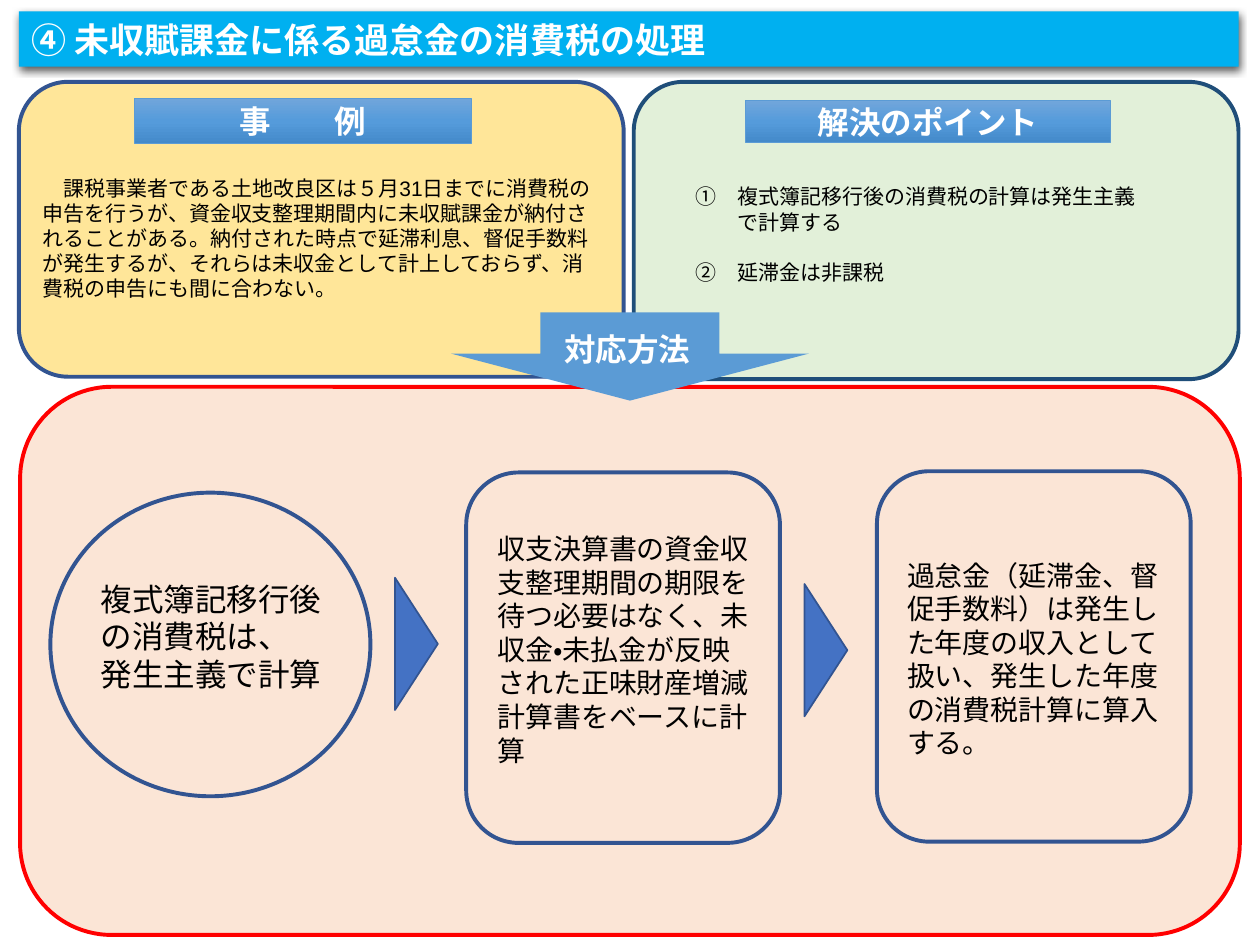
import copy

import pptx
import pptx.dml.color
import pptx.enum.lang
import pptx.enum.shapes
import pptx.enum.text
import pptx.oxml
import pptx.util
from pptx.util import Inches

RGB = pptx.dml.color.RGBColor
KIND = pptx.enum.shapes.MSO_SHAPE
ALIGN = pptx.enum.text.PP_ALIGN
ANCHOR = pptx.enum.text.MSO_ANCHOR
Pt = pptx.util.Pt

BLACK = RGB(0x00, 0x00, 0x00)
WHITE = RGB(0xFF, 0xFF, 0xFF)
RED = RGB(0xFF, 0x00, 0x00)
SKY = RGB(0x00, 0xB0, 0xF0)
PEACH = RGB(0xFB, 0xE5, 0xD6)
GREEN = RGB(0xE2, 0xF0, 0xD9)
YELLOW = RGB(0xFF, 0xE6, 0x99)
NAVY = RGB(0x32, 0x54, 0x91)
DEEP = RGB(0x1F, 0x4E, 0x79)
BLUE = RGB(0x5B, 0x9B, 0xD5)
ROYAL = RGB(0x44, 0x72, 0xC4)
SHADES = [RGB(0x71, 0xA6, 0xDB), RGB(0x55, 0x9B, 0xDB), RGB(0x44, 0x8A, 0xCA)]

HEAD = {"size": Pt(18), "bold": True, "color": WHITE}
SHADOW = (
    '<a:outerShdw xmlns:a="http://schemas.openxmlformats.org/drawingml/2006/main"'
    ' blurRad="57150" dist="19050" dir="5400000" algn="ctr" rotWithShape="0">'
    '<a:srgbClr val="000000"><a:alpha val="63000"/></a:srgbClr></a:outerShdw>'
)


def add_box(host, kind, area, fill=None, line=None, width=2.25):
    box = host.shapes.add_shape(kind, *map(Inches, area))
    box.shadow.inherit = False
    if fill is None:
        box.fill.background()
    else:
        box.fill.solid()
        box.fill.fore_color.rgb = fill
    if line is None:
        box.line.fill.background()
    else:
        box.line.color.rgb = line
        box.line.width = Pt(width)
    return box


def write(box, lines, look, align=ALIGN.LEFT, anchor=ANCHOR.TOP):
    frame = box.text_frame
    frame.word_wrap = True
    frame.vertical_anchor = anchor
    frame.text = "\n".join(lines)
    for para in frame.paragraphs:
        para.alignment = align
        for run in para.runs:
            font = run.font
            font.name = "Arial"
            font.language_id = pptx.enum.lang.MSO_LANGUAGE_ID.JAPANESE
            for name, value in look.items():
                if name == "color":
                    font.color.rgb = value
                else:
                    setattr(font, name, value)
    return frame.paragraphs


def indent(para, left, first):
    props = para._p.get_or_add_pPr()
    props.set("marL", str(Pt(left)))
    props.set("indent", str(Pt(first)))


def add_text(host, area, lines, size):
    box = host.shapes.add_textbox(*map(Inches, area))
    return write(box, lines, {"size": Pt(size), "color": BLACK})


def add_label(host, area, text):
    """Heading plate with a three-step vertical gradient."""
    box = add_box(host, KIND.RECTANGLE, area, BLUE, BLUE, 0.5)
    box.fill.gradient()
    box.fill.gradient_angle = 270
    first = box.fill._fill._gradFill.gsLst[0]
    first.addnext(copy.deepcopy(first))
    for stop, shade, place in zip(box.fill.gradient_stops, SHADES, (0, 0.5, 1)):
        stop.color.rgb = shade
        stop.position = place
    write(box, [text], HEAD, ALIGN.CENTER, ANCHOR.MIDDLE)


def add_panel(slide, area, fill, line, plate, title, place, lines):
    group = slide.shapes.add_group_shape()
    add_box(group, KIND.ROUNDED_RECTANGLE, area, fill, line)
    paras = add_text(group, place, lines, 12)
    add_label(group, plate, title)
    return paras


def add_step(slide, kind, area, place, lines, size):
    group = slide.shapes.add_group_shape()
    add_text(group, place, lines, size)
    add_box(group, kind, area, line=NAVY)


def add_title(slide):
    bar = add_box(slide, KIND.RECTANGLE, (0.15, 0.09, 9.68, 0.44), SKY)
    bar._element.spPr.find(pptx.oxml.ns.qn("a:effectLst")).append(
        pptx.oxml.parse_xml(SHADOW))
    write(bar, ["④ 未収賦課金に係る過怠金の消費税の処理"], {**HEAD, "size": Pt(20)},
          anchor=ANCHOR.MIDDLE)


def add_arrow(slide):
    group = slide.shapes.add_group_shape()
    arrow = add_box(group, KIND.DOWN_ARROW, (3.58, 2.48, 2.84, 0.7), BLUE)
    arrow.adjustments[1] = 0.533
    box = add_box(group, KIND.RECTANGLE, (4.38, 2.57, 1.24, 0.4), BLUE)
    write(box, ["対応方法"], HEAD)


def add_wedge(slide, left, top):
    wedge = add_box(slide, KIND.FLOWCHART_MERGE, (left, top, 1.05, 0.34),
                    ROYAL, NAVY, 1)
    wedge.rotation = 270


def main():
    deck = pptx.Presentation()
    deck.slide_width, deck.slide_height = Inches(10), Inches(7.5)
    slide = deck.slides.add_slide(deck.slide_layouts[6])

    add_box(slide, KIND.ROUNDED_RECTANGLE, (0.16, 3.07, 9.68, 4.35), PEACH, RED)
    add_title(slide)

    points = add_panel(
        slide, (5.03, 0.65, 4.8, 2.36), GREEN, DEEP,
        (5.92, 0.8, 2.89, 0.33), "解決のポイント", (5.42, 1.41, 3.88, 0.91),
        ["①　複式簿記移行後の消費税の計算は発生主義\vで計算する", "②　延滞金は非課税"])
    for para in points:
        indent(para, 24, -24)
    points[1].space_before = Pt(14.5)

    case = add_panel(
        slide, (0.15, 0.65, 4.8, 2.34), YELLOW, NAVY,
        (1.07, 0.78, 2.67, 0.36), "事　　例", (0.24, 1.34, 4.62, 1.11),
        ["課税事業者である土地改良区は５月31日までに消費税の申告を行うが、"
         "資金収支整理期間内に未収賦課金が納付されることがある。"
         "納付された時点で延滞利息、督促手数料が発生するが、"
         "それらは未収金として計上しておらず、消費税の申告にも間に合わない。"])
    indent(case[0], 0, 12)

    add_arrow(slide)
    add_step(slide, KIND.OVAL, (0.4, 3.91, 2.54, 2.41), (0.7, 4.55, 1.98, 0.95),
             ["複式簿記移行後の消費税は、", "発生主義で計算"], 18)
    add_wedge(slide, 2.78, 4.94)
    add_step(slide, KIND.ROUNDED_RECTANGLE, (3.7, 3.75, 2.49, 2.94),
             (3.85, 4.17, 2.21, 1.99),
             ["収支決算書の資金収支整理期間の期限を待つ必要はなく、"
              "未収金・未払金が反映された正味財産増減計算書をベースに計算"], 16)
    add_wedge(slide, 6.03, 4.99)
    add_step(slide, KIND.ROUNDED_RECTANGLE, (6.96, 3.74, 2.49, 2.94),
             (7.1, 4.38, 2.21, 1.72),
             ["過怠金（延滞金、督促手数料）は発生した年度の収入として扱い、"
              "発生した年度の消費税計算に算入する。"], 16)

    deck.save("out.pptx")


if __name__ == "__main__":
    main()
